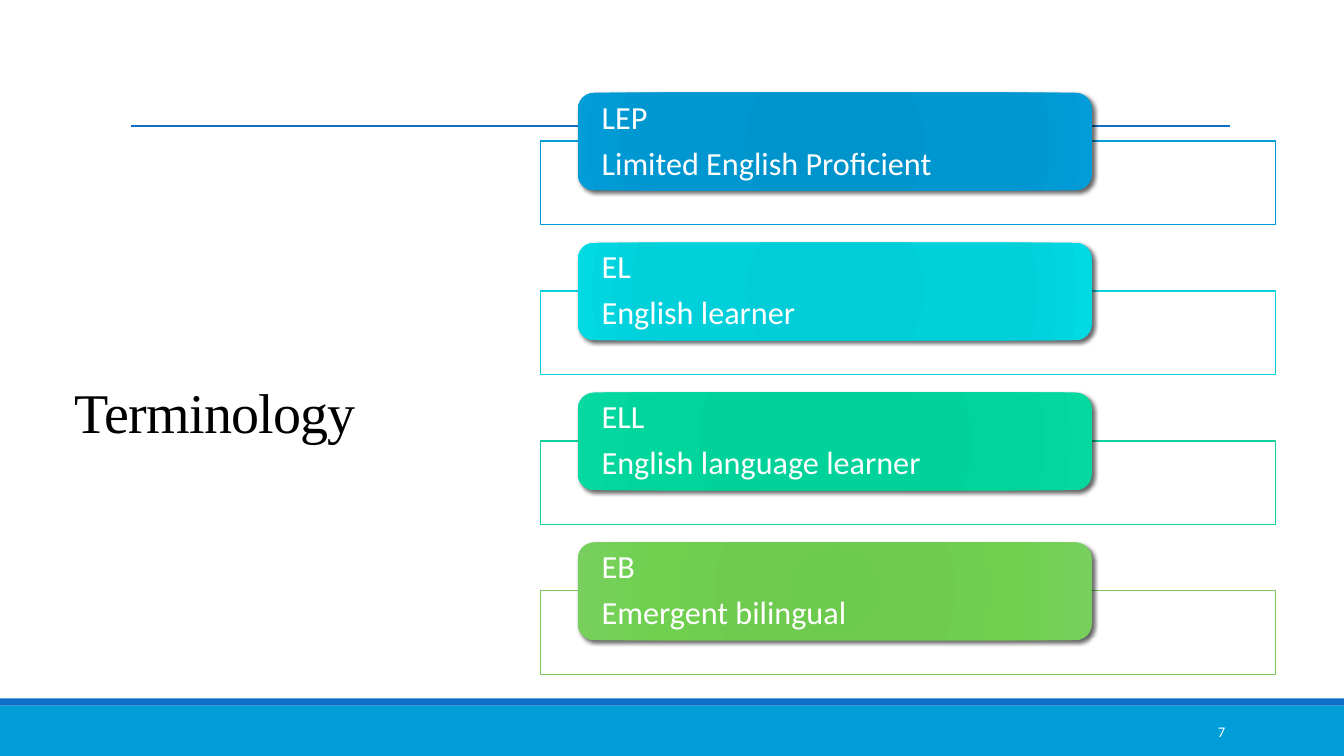
from lxml import etree
from pptx import Presentation
from pptx.dml.color import RGBColor
from pptx.enum.shapes import MSO_CONNECTOR, MSO_SHAPE
from pptx.enum.text import MSO_ANCHOR, PP_ALIGN
from pptx.oxml import parse_xml
from pptx.oxml.ns import nsdecls, qn
from pptx.util import Inches, Pt

RECTANGLE, ROUNDED = MSO_SHAPE.RECTANGLE, MSO_SHAPE.ROUNDED_RECTANGLE
STRAIGHT = MSO_CONNECTOR.STRAIGHT
MIDDLE, BOTTOM = MSO_ANCHOR.MIDDLE, MSO_ANCHOR.BOTTOM
LEFT, RIGHT = PP_ALIGN.LEFT, PP_ALIGN.RIGHT

WHITE = RGBColor(0xFF, 0xFF, 0xFF)
BLACK = RGBColor(0x00, 0x00, 0x00)
BLUE = RGBColor(0x0F, 0x6F, 0xC6)
SKY = RGBColor(0x00, 0x9D, 0xD9)
TURQUOISE = RGBColor(0x0B, 0xD0, 0xD9)
GREEN = RGBColor(0x10, 0xCF, 0x9B)
LIME = RGBColor(0x7C, 0xCA, 0x62)

# Abbreviation, meaning, frame colour, gradient colours
GRADIENT_STOPS = (0, 34, 70, 100)
TERMS = [
    ("LEP", "Limited English Proficient", SKY,
     ("0092CA", "0094CC", "0096CF", "009DD9")),
    ("EL", "English learner", TURQUOISE,
     ("00CBD4", "00CDD7", "00D0DA", "01D9E3")),
    ("ELL", "English language learner", GREEN,
     ("00D097", "00D299", "00D59B", "06D99F")),
    ("EB", "Emergent bilingual", LIME,
     ("6CCB4D", "6FCA50", "6FD04F", "79CF5D")),
]
TERM_PITCH = 1.487


def write_text(shape, lines, size, font="Calibri", color=WHITE, align=LEFT,
               anchor=MIDDLE, insets=(0.1, 0.05, 0.1, 0.05),
               line_spacing=1.0, space_after=0, tracking=0):
    frame = shape.text_frame
    frame.word_wrap = True
    frame.vertical_anchor = anchor
    (frame.margin_left, frame.margin_top,
     frame.margin_right, frame.margin_bottom) = map(Inches, insets)
    for index, line in enumerate(lines):
        para = frame.paragraphs[0] if index == 0 else frame.add_paragraph()
        para.alignment = align
        para.line_spacing = line_spacing
        para.space_after = Pt(space_after)
        span = para.add_run()
        span.text = line
        span.font.size = Pt(size)
        span.font.name = font
        span.font.color.rgb = color
        if tracking:
            span.font._element.set("spc", str(int(tracking * 100)))


def add_box(page, kind, box, fill=None, line=None):
    shape = page.shapes.add_shape(kind, *map(Inches, box))
    shape.shadow.inherit = False
    if fill is not None:
        shape.fill.solid()
        shape.fill.fore_color.rgb = fill
    if line is None:
        shape.line.fill.background()
    else:
        shape.line.color.rgb = line
        shape.line.width = Pt(1)
    return shape


def add_gradient(shape, colors):
    stops = "".join(
        f'<a:gs pos="{stop * 1000}"><a:srgbClr val="{color}"/></a:gs>'
        for stop, color in zip(GRADIENT_STOPS, colors))
    shape._element.spPr.find(qn("a:prstGeom")).addnext(parse_xml(
        f'<a:gradFill {nsdecls("a")} rotWithShape="1"><a:gsLst>{stops}</a:gsLst>'
        '<a:path path="circle"><a:fillToRect l="100000" t="100000" '
        'r="100000" b="100000"/></a:path></a:gradFill>'))


def add_shadow(shape):
    effects = shape._element.spPr.find(qn("a:effectLst"))
    effects.append(parse_xml(
        f'<a:outerShdw {nsdecls("a")} blurRad="{Pt(3)}" dist="{Pt(2)}" '
        'dir="2700000" algn="ctr" rotWithShape="0"><a:srgbClr val="000000">'
        '<a:alpha val="60000"/></a:srgbClr></a:outerShdw>'))


def add_rule(page, left, top, width):
    rule = page.shapes.add_connector(
        STRAIGHT, Inches(left), Inches(top), Inches(left + width), Inches(top))
    rule.line.color.rgb = BLUE
    rule.line.width = Pt(2)
    etree.SubElement(rule._element.spPr, qn("a:effectLst"))


def add_footer(page, left, top, width, number):
    add_box(page, RECTANGLE, (left, top + 0.07, width, 0.5), fill=SKY)
    add_box(page, RECTANGLE, (left, top, width, 0.07), fill=BLUE)
    label = page.shapes.add_textbox(
        Inches(left + 10.82), Inches(top + 0.13), Inches(1.43), Inches(0.4))
    write_text(label, [number], 10.5, align=RIGHT)


def add_title(page, box, title):
    label = page.shapes.add_textbox(*map(Inches, box))
    write_text(label, [title], 40, font="Times New Roman", color=BLACK,
               align=RIGHT, anchor=BOTTOM, insets=(0.1, 0.05, 0.52, 0.05),
               line_spacing=0.85, tracking=-0.5)


def add_term(page, left, top, term):
    abbreviation, meaning, color, gradient = term
    # Outlined frame behind the card
    add_box(page, RECTANGLE, (left, top + 0.48, 7.29, 0.83),
            fill=WHITE, line=color)
    # Card with the term
    card = add_box(page, ROUNDED, (left + 0.37, top, 5.1, 0.97))
    add_gradient(card, gradient)
    add_shadow(card)
    write_text(card, [abbreviation, meaning], 23, insets=(0.19, 0, 0.19, 0),
               line_spacing=0.9, space_after=8)


def main():
    deck = Presentation()
    deck.slide_width, deck.slide_height = Inches(13.33), Inches(7.5)
    page = deck.slides.add_slide(deck.slide_layouts[6])
    add_footer(page, 0, 6.93, 13.33, "7")
    add_rule(page, 1.3, 1.25, 10.9)
    add_title(page, (0.64, 1.84, 3.41, 2.62), "Terminology")
    for row, term in enumerate(TERMS):
        add_term(page, 5.36, 0.92 + row * TERM_PITCH, term)
    deck.save("out.pptx")


if __name__ == "__main__":
    main()
